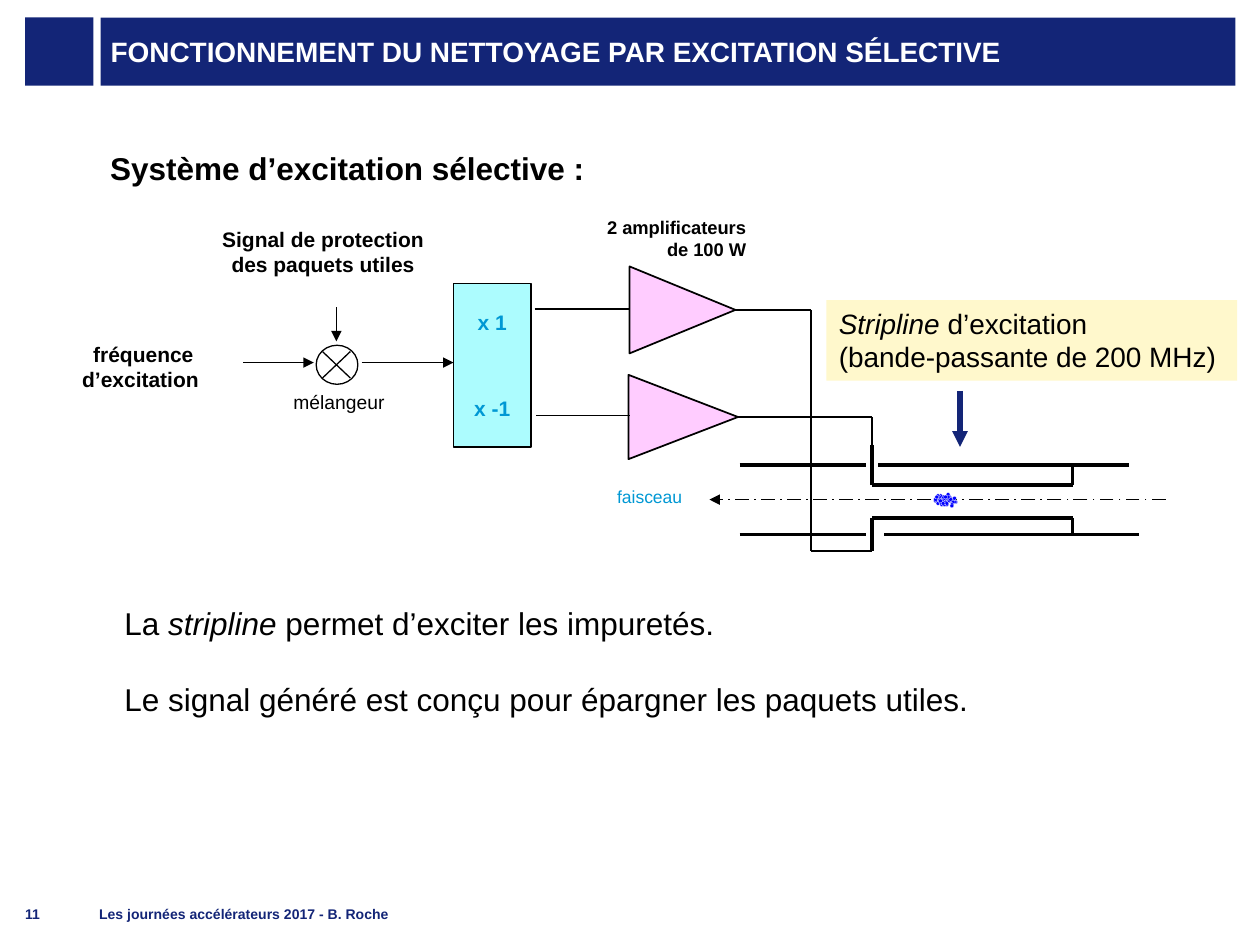
from dataclasses import dataclass
from itertools import pairwise

from lxml import etree
from pptx import Presentation
from pptx.dml.color import RGBColor
from pptx.enum.dml import MSO_LINE
from pptx.enum.shapes import MSO_CONNECTOR, MSO_SHAPE
from pptx.enum.text import MSO_ANCHOR, MSO_AUTO_SIZE, PP_ALIGN
from pptx.oxml.ns import qn
from pptx.util import Pt

LEFT, CENTER, RIGHT = PP_ALIGN.LEFT, PP_ALIGN.CENTER, PP_ALIGN.RIGHT
TOP, MIDDLE, BOTTOM = MSO_ANCHOR.TOP, MSO_ANCHOR.MIDDLE, MSO_ANCHOR.BOTTOM
RECT, OVAL = MSO_SHAPE.RECTANGLE, MSO_SHAPE.OVAL
TRIANGLE = MSO_SHAPE.ISOSCELES_TRIANGLE
DASH_DOT = MSO_LINE.LONG_DASH_DOT


@dataclass(frozen=True)
class Theme:
    font: str = "Arial"
    # Colours
    navy: str = "132577"
    black: str = "000000"
    white: str = "FFFFFF"
    blue: str = "0098D4"
    pink: str = "FFCCFF"
    cyan: str = "ACFCFE"
    cream: str = "FFF8CC"
    beam: str = "0000FF"
    # Type sizes
    body: float = 18
    heading: float = 16
    label: float = 12
    caption: float = 11
    amplifier: float = 10.5
    beam_label: float = 10
    footer: float = 8
    # Line widths
    thin: float = 0.75
    cable: float = 1
    wall: float = 2
    pointer: float = 3


THEME = Theme()

# Bunch particles, as (column, row) on a fine grid
PARTICLES = [
    (16, 6), (12, 3), (15, 6), (9, 8), (5, 8), (4, 4), (5, 4), (6, 6), (3, 5), (2, 7),
    (0, 5), (0, 4), (6, 4), (4, 6), (7, 8), (8, 6), (12, 5), (9, 7), (6, 7), (7, 3),
    (10, 4), (6, 2), (4, 1), (3, 2), (11, 5), (10, 0), (2, 1), (11, 2), (11, 3), (12, 4),
    (14, 6), (13, 8), (10, 2), (8, 2), (4, 5), (1, 2), (13, 9), (15, 3),
]


def rgb(colour):
    return RGBColor.from_string(colour)


def write(frame, paragraphs, size, colour=THEME.black, bold=False, align=LEFT,
          anchor=TOP, insets=(7.2, 3.6), gap=0):
    """Fill a frame; each paragraph is a list of (text, italic) runs or a string."""
    frame.word_wrap = True
    frame.auto_size = MSO_AUTO_SIZE.NONE
    frame.vertical_anchor = anchor
    frame.margin_left = frame.margin_right = Pt(insets[0])
    frame.margin_top = frame.margin_bottom = Pt(insets[1])
    for index, content in enumerate(paragraphs):
        paragraph = frame.add_paragraph() if index else frame.paragraphs[0]
        paragraph.alignment = align
        if index:
            paragraph.space_before = Pt(gap)
        font = paragraph.font
        font.name, font.size, font.bold = THEME.font, Pt(size), bold
        font.color.rgb = rgb(colour)
        if isinstance(content, str):
            paragraph.text = content
            continue
        for text, italic in content:
            for line_index, line in enumerate(text.split("\n")):
                if line_index:
                    paragraph.add_line_break()
                run = paragraph.add_run()
                run.text = line
                if italic:
                    run.font.italic = True


def text_box(slide, box, paragraphs, size, **style):
    frame = slide.shapes.add_textbox(*map(Pt, box)).text_frame
    write(frame, paragraphs, size, **style)


def block(slide, kind, box, fill, line=None, width=THEME.cable):
    shape = slide.shapes.add_shape(kind, *map(Pt, box))
    shape.shadow.inherit = False
    shape.fill.solid()
    shape.fill.fore_color.rgb = rgb(fill)
    if line:
        shape.line.color.rgb = rgb(line)
        shape.line.width = Pt(width)
    else:
        shape.line.fill.background()
    return shape


def wire(slide, points, width=THEME.cable, colour=THEME.black, arrow=False, dash=None):
    """Join successive points with straight connectors."""
    for start, end in pairwise(points):
        segment = slide.shapes.add_connector(
            MSO_CONNECTOR.STRAIGHT, *map(Pt, (*start, *end)))
        segment.line.color.rgb = rgb(colour)
        segment.line.width = Pt(width)
        if dash:
            segment.line.dash_style = dash
        if arrow:
            etree.SubElement(segment.line._get_or_add_ln(), qn("a:tailEnd"), type="triangle")
        etree.SubElement(segment._element.spPr, qn("a:effectLst"))


def amplifier(slide, center_x, center_y, length, height):
    box = (center_x - height / 2, center_y - length / 2, height, length)
    block(slide, TRIANGLE, box, THEME.pink, THEME.black).rotation = 90


def draw_header(slide):
    block(slide, RECT, (14.4, 10, 39, 39), THEME.navy)
    title = slide.shapes.title
    title.left, title.top, title.width, title.height = map(Pt, (57.5, 10, 648.5, 39))
    title.fill.solid()
    title.fill.fore_color.rgb = rgb(THEME.navy)
    write(title.text_frame, ["FONCTIONNEMENT DU NETTOYAGE PAR EXCITATION SÉLECTIVE"],
          THEME.heading, colour=THEME.white, bold=True, anchor=MIDDLE, insets=(5.76, 0))


def draw_mixer(slide):
    block(slide, OVAL, (180.7, 197.3, 23.8, 22.3), THEME.white, THEME.black, THEME.thin)
    wire(slide, [(184.3, 200.9), (200.2, 216)], THEME.thin)
    wire(slide, [(200.2, 200.9), (184.3, 216)], THEME.thin)
    for start, end in [((139, 207.2), (179.3, 207.2)),
                       ((206.6, 207.2), (259.2, 207.2)),
                       ((192.2, 175.5), (192.2, 195.1))]:
        wire(slide, [start, end], THEME.thin, arrow=True)
    text_box(slide, (13.7, 191.5, 133.2, 36), [[(" fréquence\nd’excitation", False)]],
             THEME.label, bold=True, align=CENTER)
    text_box(slide, (116.6, 126, 136.1, 36),
             [[("Signal de protection\ndes paquets utiles", False)]],
             THEME.label, bold=True, align=CENTER)
    text_box(slide, (160.6, 219.6, 72, 21), ["mélangeur"], THEME.caption)


def draw_amplifiers(slide):
    splitter = block(slide, RECT, (259.2, 162, 44.2, 93.4), THEME.cyan, THEME.black)
    write(splitter.text_frame, ["x 1", "x -1"], THEME.label, colour=THEME.blue, bold=True,
          align=CENTER, anchor=MIDDLE, insets=(0, 3.6), gap=35)
    amplifier(slide, 390, 177.1, 60.5, 49.7)
    amplifier(slide, 390.4, 238.3, 62.6, 48.2)
    wire(slide, [(305.5, 176.4), (359.6, 176.4)])
    wire(slide, [(306.5, 237.5), (360.3, 237.5)])
    text_box(slide, (305.3, 120.2, 128.2, 32.4), [[("2 amplificateurs\nde 100 W", False)]],
             THEME.amplifier, bold=True, align=RIGHT)


def draw_stripline(slide):
    # Cables from the amplifiers to the electrodes
    wire(slide, [(419.8, 177.1), (463.5, 177.1), (463.5, 314.7), (498.2, 314.7)])
    wire(slide, [(421.2, 238.3), (498.2, 238.3), (498.2, 261.4)])
    # Chamber walls and electrodes: wall y, electrode y, feed y, right wall ends
    for wall, electrode, feed, left, right in [(265.6, 277.2, 254.2, 502, 645),
                                               (305.4, 295.9, 314.7, 505.4, 651)]:
        wire(slide, [(422.6, wall), (494.6, wall)], THEME.wall)
        wire(slide, [(left, wall), (right, wall)], THEME.wall)
        wire(slide, [(613, wall), (613, electrode), (498.2, electrode), (498.2, feed)],
             THEME.wall)
    # Beam axis and bunch
    wire(slide, [(666, 285.5), (405.4, 285.5)], arrow=True, dash=DASH_DOT)
    for column, row in PARTICLES:
        block(slide, OVAL, (533.5 + 0.72 * column, 281.5 + 0.72 * row, 2.2, 2.2),
              THEME.beam, THEME.white, 0.13)
    text_box(slide, (345.6, 274.3, 59.8, 20.2), ["faisceau"], THEME.beam_label,
             colour=THEME.blue)
    # Callout
    callout = block(slide, RECT, (472.3, 171.5, 234.7, 46), THEME.cream)
    write(callout.text_frame,
          [[("Stripline ", True), ("d’excitation\n(bande-passante de 200 MHz)", False)]],
          THEME.heading)
    wire(slide, [(548.6, 223.4), (548.6, 255.4)], THEME.pointer, THEME.navy, arrow=True)


def draw_texts(slide):
    text_box(slide, (55.8, 81.4, 300, 29), ["Système d’excitation sélective :"],
             THEME.body, bold=True)
    text_box(slide, (64, 341.6, 510, 72.7),
             [[("La ", False), ("stripline ", True), ("permet d’exciter les impuretés.", False)],
              "Le signal généré est conçu pour épargner les paquets utiles."],
             THEME.body, gap=22)
    for left, width, text in [(14.4, 32.4, "11"),
                              (56.6, 481.7, "Les journées accélérateurs 2017 - B. Roche")]:
        text_box(slide, (left, 510.5, width, 16.6), [text], THEME.footer,
                 colour=THEME.navy, bold=True, anchor=BOTTOM, insets=(0, 0))


def main():
    deck = Presentation()
    deck.slide_width, deck.slide_height = Pt(720), Pt(540)
    slide = deck.slides.add_slide(deck.slide_layouts[5])
    draw_header(slide)
    draw_mixer(slide)
    draw_amplifiers(slide)
    draw_stripline(slide)
    draw_texts(slide)
    deck.save("out.pptx")


if __name__ == "__main__":
    main()
